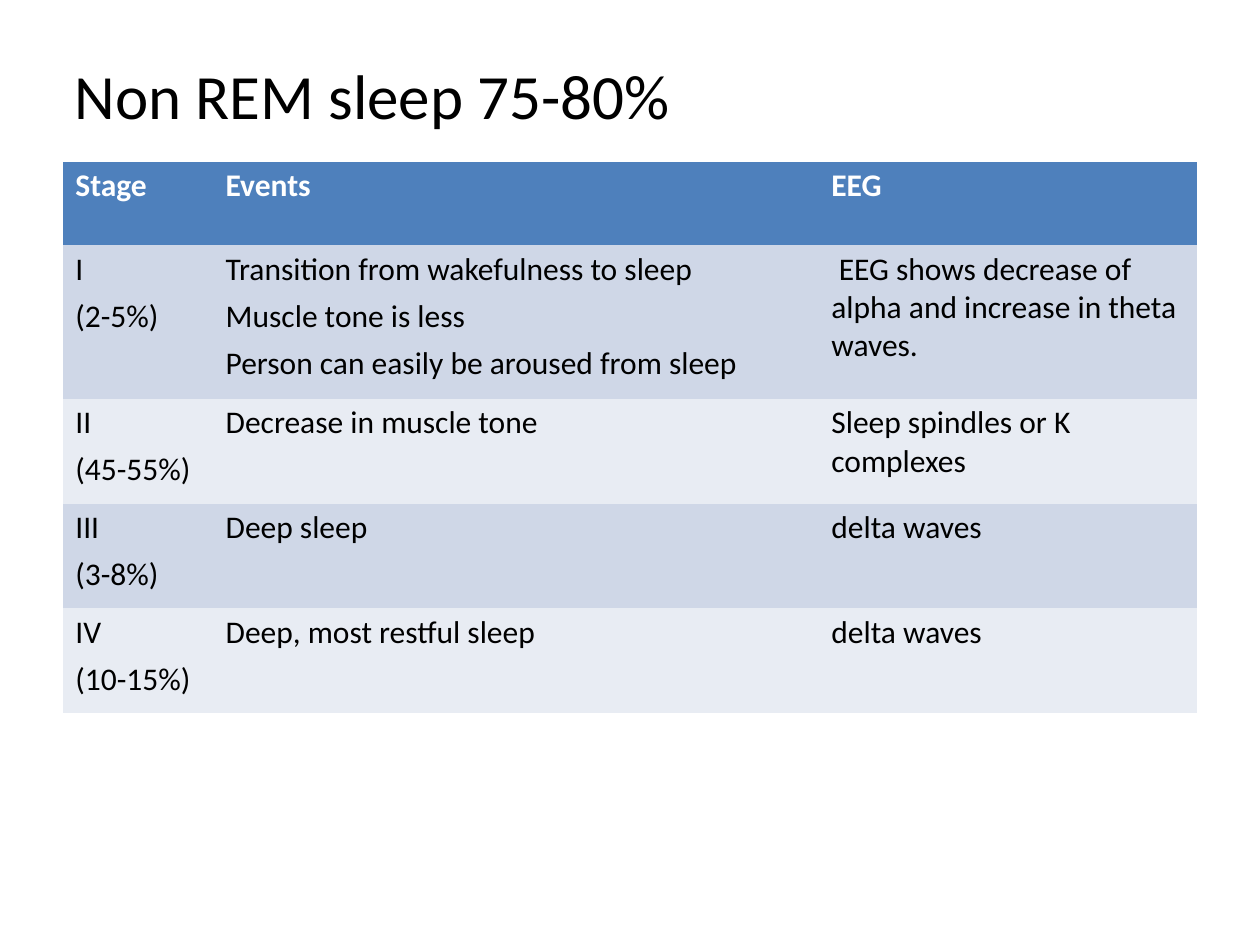
from pptx import Presentation
from pptx.dml.color import RGBColor
from pptx.enum.text import MSO_ANCHOR, PP_ALIGN
from pptx.oxml.ns import qn
from pptx.util import Cm, Pt

FONT = "Calibri"
BLACK, WHITE = "000000", "FFFFFF"
HEADER_FILL = "4E80BC"
BAND_FILLS = ["CFD7E7", "E8ECF3"]
NO_STYLE = "{2D5ABB26-0587-4C30-8999-92F81FD0307C}"

COLUMN_WIDTHS = [2.92, 11.63, 8.31]
COLUMN_INDENTS = [0.25, 0.36, 0.94]
ROW_HEIGHTS = [1.68, 3.1, 2.11, 2.11, 2.11]
ROWS = [
    [["Stage"], ["Events"], ["EEG"]],
    [["I", "(2-5%)"],
     ["Transition from wakefulness to sleep", "Muscle tone is less",
      "Person can easily be aroused from sleep"],
     ["EEG shows decrease of alpha and increase in theta waves."]],
    [["II", "(45-55%)"], ["Decrease in muscle tone"],
     ["Sleep spindles or K complexes"]],
    [["III", "(3-8%)"], ["Deep sleep"], ["delta waves"]],
    [["IV", "(10-15%)"], ["Deep, most restful sleep"], ["delta waves"]],
]


def color(value):
    return RGBColor.from_string(value)


def write_paragraph(para, text, size=18, fill=BLACK, bold=False,
                    before=0, indent=0, first_line=0):
    para.alignment = PP_ALIGN.LEFT
    para.space_before = Pt(before)
    properties = para._p.get_or_add_pPr()
    properties.set("marL", str(Cm(indent)))
    properties.set("indent", str(Cm(first_line)))
    span = para.add_run()
    span.text = text
    span.font.name = FONT
    span.font.size = Pt(size)
    span.font.bold = bold
    span.font.color.rgb = color(fill)


def add_title(page, text):
    box = page.shapes.title
    box.left, box.top, box.width, box.height = Cm(1.47), Cm(1.09), Cm(13.7), Cm(1.6)
    frame = box.text_frame
    frame.margin_left = frame.margin_right = frame.margin_bottom = 0
    frame.margin_top = Cm(0.03)
    frame.vertical_anchor = MSO_ANCHOR.MIDDLE
    write_paragraph(frame.paragraphs[0], text, size=36, before=1, indent=0.03)


def fill_cell(cell, lines, background, **text_format):
    cell.fill.solid()
    cell.fill.fore_color.rgb = color(background)
    cell.margin_left = cell.margin_right = cell.margin_bottom = 0
    cell.margin_top = Cm(0.1)
    cell.vertical_anchor = MSO_ANCHOR.TOP
    frame = cell.text_frame
    for number, line in enumerate(lines):
        para = frame.add_paragraph() if number else frame.paragraphs[0]
        write_paragraph(para, line, before=4.9 if number else 2.8, **text_format)


def add_stage_table(page):
    table = page.shapes.add_table(
        len(ROWS), len(COLUMN_WIDTHS), Cm(1.27), Cm(3.26),
        Cm(sum(COLUMN_WIDTHS)), Cm(sum(ROW_HEIGHTS))).table
    table._tbl.tblPr.find(qn("a:tableStyleId")).text = NO_STYLE
    table.horz_banding = False
    for column, width in zip(table.columns, COLUMN_WIDTHS):
        column.width = Cm(width)
    for row, height in zip(table.rows, ROW_HEIGHTS):
        row.height = Cm(height)
    for row_number, row in enumerate(ROWS):
        header = row_number == 0
        background = HEADER_FILL if header else BAND_FILLS[(row_number - 1) % 2]
        for column_number, lines in enumerate(row):
            opens_indented = lines[0].startswith("EEG shows")
            fill_cell(table.cell(row_number, column_number), lines, background,
                      fill=WHITE if header else BLACK, bold=header,
                      indent=COLUMN_INDENTS[column_number],
                      first_line=0.15 if opens_indented else 0)


def main():
    deck = Presentation()
    deck.slide_width, deck.slide_height = Cm(25.4), Cm(19.05)
    page = deck.slides.add_slide(deck.slide_layouts.get_by_name("Title Only"))
    add_title(page, "Non REM sleep 75-80%")
    add_stage_table(page)
    deck.save("out.pptx")


if __name__ == "__main__":
    main()
